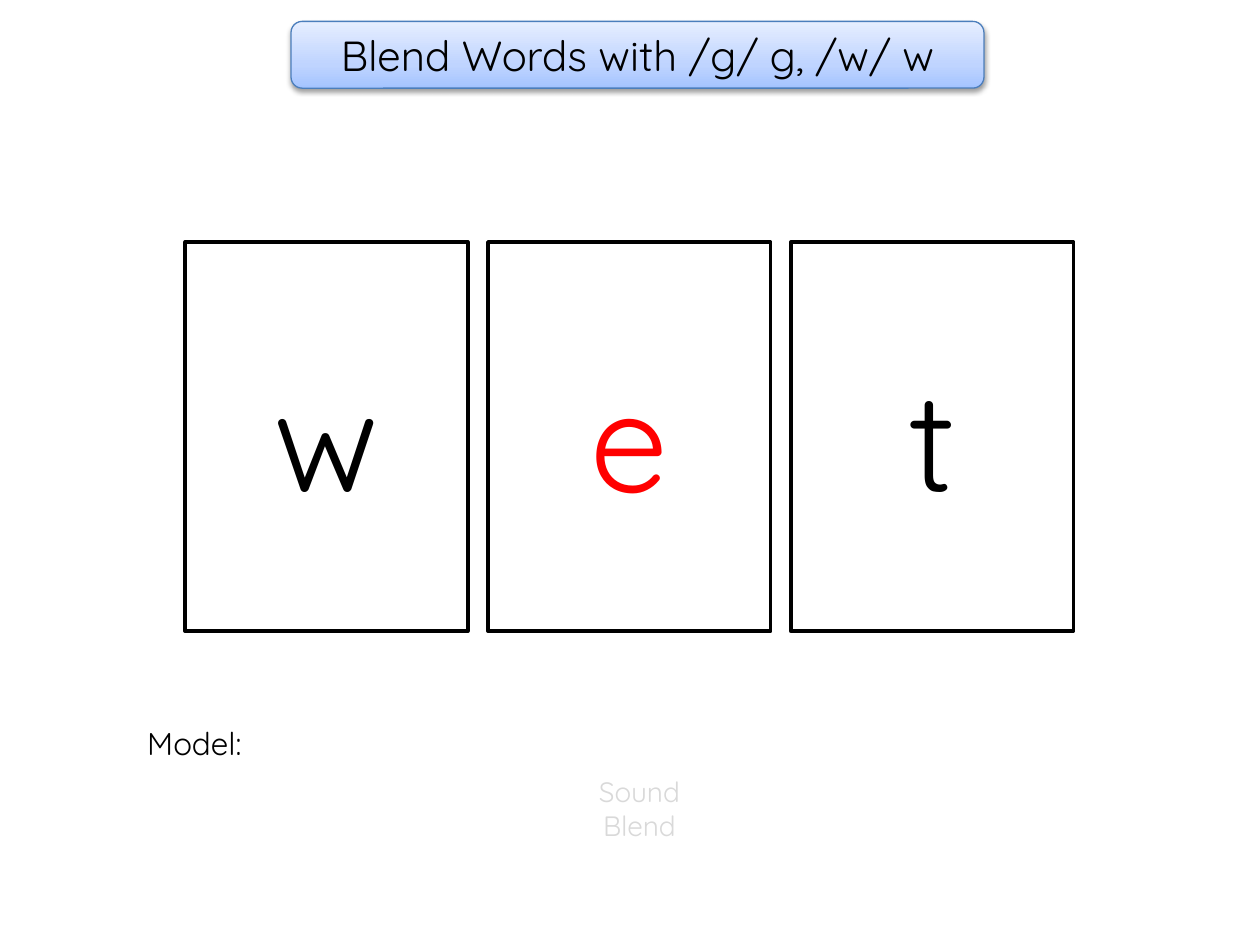
from copy import deepcopy

from lxml import etree
from pptx import Presentation
from pptx.dml.color import RGBColor
from pptx.enum.shapes import MSO_SHAPE
from pptx.enum.text import MSO_ANCHOR, MSO_AUTO_SIZE, PP_ALIGN
from pptx.oxml.ns import qn
from pptx.util import Inches, Pt

RECT, ROUND_RECT = MSO_SHAPE.RECTANGLE, MSO_SHAPE.ROUNDED_RECTANGLE
MIDDLE = MSO_ANCHOR.MIDDLE
LEFT, CENTER = PP_ALIGN.LEFT, PP_ALIGN.CENTER
FIT_SHAPE = MSO_AUTO_SIZE.SHAPE_TO_FIT_TEXT

FONT = "Quicksand"
COLORS = {
    "text": "000000",
    "vowel": "FF0000",
    "hint": "D9D9D9",
    "card": "FFFFFF",
    "card_line": "000000",
    "title_line": "4B7EBC",
    "shadow": "000000",
}
TITLE_STOPS = [(0, "A4C4FF"), (0.35, "BFD4FF"), (1, "E6EEFF")]


def rgb(name):
    """Return the named colour."""
    return RGBColor.from_string(COLORS[name])


def write(tf, lines, size, color, align):
    """Fill a text frame with one paragraph per line."""
    tf.word_wrap = True
    for i, line in enumerate(lines):
        p = tf.paragraphs[0] if i == 0 else tf.add_paragraph()
        p.text = line
        p.alignment = align
        p.font.name = FONT
        p.font.size = Pt(size)
        p.font.color.rgb = rgb(color)


def add_label(s, x, y, w, h, lines, size, color, align):
    """Add a text box that grows with its text."""
    tf = s.shapes.add_textbox(Inches(x), Inches(y), Inches(w), Inches(h)).text_frame
    write(tf, lines, size, color, align)
    tf.auto_size = FIT_SHAPE


def add_panel(s, kind, x, y, w, h, text, size, color, line, weight):
    """Add an outlined shape with centred text."""
    sp = s.shapes.add_shape(kind, Inches(x), Inches(y), Inches(w), Inches(h))
    sp.shadow.inherit = False
    sp.line.color.rgb = rgb(line)
    sp.line.width = Pt(weight)
    sp.text_frame.vertical_anchor = MIDDLE
    write(sp.text_frame, [text], size, color, CENTER)
    return sp


def add_title_shadow(sp):
    """Give the title bar a soft shadow straight below it."""
    effects = sp._element.spPr.find(qn("a:effectLst"))
    shadow = etree.SubElement(effects, qn("a:outerShdw"), blurRad=str(Pt(3.1)),
                              dist=str(Pt(1.6)), dir="5400000", rotWithShape="0")
    color = etree.SubElement(shadow, qn("a:srgbClr"), val=COLORS["shadow"])
    etree.SubElement(color, qn("a:alpha"), val="38000")


def add_title(s, x, y, w, h, text):
    """Add the title bar with its gradient and shadow."""
    sp = add_panel(s, ROUND_RECT, x, y, w, h, text, 24, "text", "title_line", 0.75)
    sp.fill.gradient()
    sp.fill.gradient_angle = 90
    stops = sp._element.spPr.find(qn("a:gradFill")).find(qn("a:gsLst"))
    stops.append(deepcopy(stops[-1]))
    for stop, (position, color) in zip(sp.fill.gradient_stops, TITLE_STOPS):
        stop.position = position
        stop.color.rgb = RGBColor.from_string(color)
    add_title_shadow(sp)


def add_letter_cards(s, x, y, w, h, letters, gap):
    """Add a row of equal cards, one per letter, across the box."""
    card_w = (w - gap * (len(letters) - 1)) / len(letters)
    for i, letter in enumerate(letters):
        color = "vowel" if letter in "aeiou" else "text"
        card = add_panel(s, RECT, x + i * (card_w + gap), y, card_w, h,
                         letter, 80, color, "card_line", 2)
        card.fill.solid()
        card.fill.fore_color.rgb = rgb("card")


def main():
    """Build the word blending slide."""
    prs = Presentation()
    prs.slide_width, prs.slide_height = Inches(10), Inches(7.5)
    s = prs.slides.add_slide(prs.slide_layouts[6])
    add_label(s, 0.34, 6.1, 9.47, 0.64, ["Sound", "Blend"], 16, "hint", CENTER)
    add_label(s, 1.07, 5.7, 1.45, 0.4, ["Model:"], 18, "text", LEFT)
    add_letter_cards(s, 1.47, 1.92, 7.05, 3.09, "wet", 0.16)
    add_title(s, 2.31, 0.17, 5.5, 0.53, "Blend Words with /g/ g, /w/ w")
    prs.save("out.pptx")


if __name__ == "__main__":
    main()
